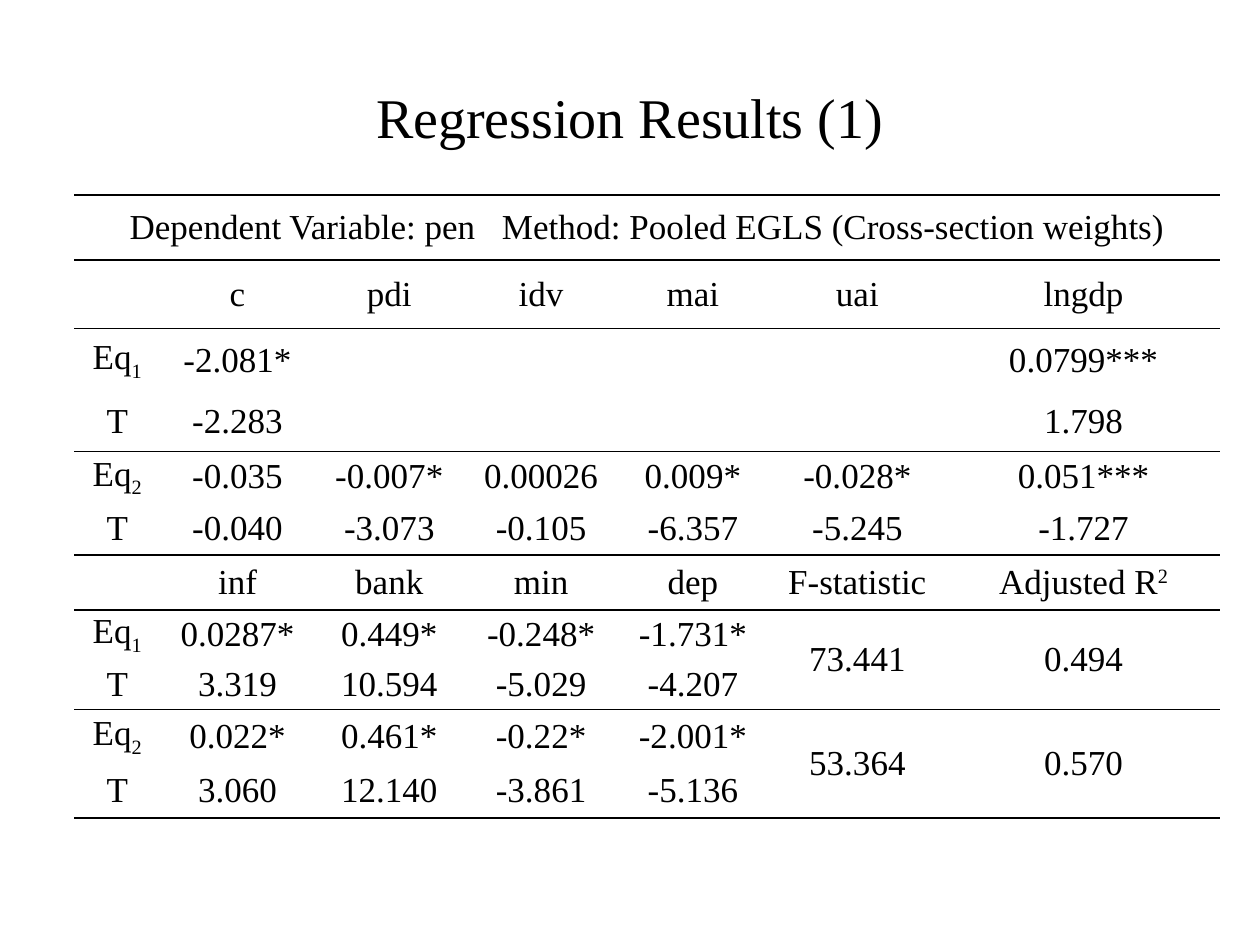
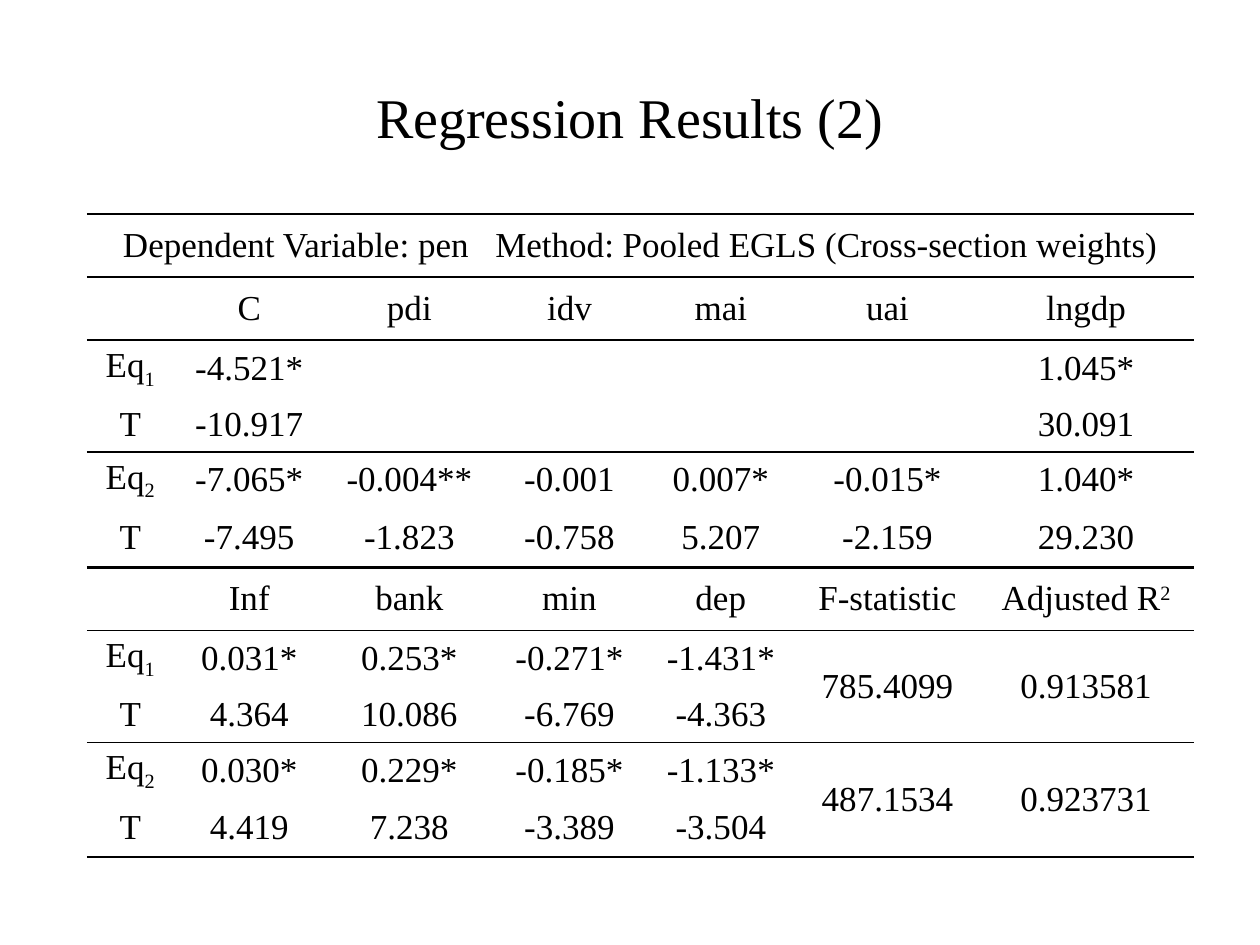
"""Build two slides of pooled regression results, one table each."""
from lxml import etree
from pptx import Presentation
from pptx import util as u
from pptx.dml.color import RGBColor
from pptx.enum import text
from pptx.oxml.ns import qn

BLACK = RGBColor(0, 0, 0)
FONT = "Times New Roman"
PLAIN_TABLE = "{2D5ABB26-0587-4C30-8999-92F81FD0307C}"

SUBSCRIPT = {"baseline": "-25000"}
SUPERSCRIPT = {"baseline": "30000"}
WIDE_GAP = {"spc": "1000"}

METHOD = [("Dependent Variable: pen", {}), (" ", WIDE_GAP),
          ("Method: Pooled EGLS (Cross-section weights)", {})]
EQ1 = [("Eq", {}), ("1", SUBSCRIPT)]
EQ2 = [("Eq", {}), ("2", SUBSCRIPT)]
ADJUSTED_R2 = [("Adjusted R", {}), ("2", SUPERSCRIPT)]

RULES = {0: 1.5, 1: 1.5, 2: 1, 4: 1, 6: 1.5, 7: 1, 9: 1, 11: 1.5}
MERGES = [(0, 0, 0, 6)] + [(row, col, row + 1, col) for row in (7, 9) for col in (5, 6)]

RESULTS = [
    {
        "title": "Regression Results (1)",
        "corner": (42.5, 111.6),
        "widths": [49, 88.5, 85, 88.5, 85, 103, 155.5],
        "heights": [37, 39, 36.5, 34, 29, 30, 31.5, 28.5, 28.5, 30.5, 31.5],
        "rows": [
            [METHOD],
            ["", "c", "pdi", "idv", "mai", "uai", "lngdp"],
            [EQ1, "-2.081*", "", "", "", "", "0.0799***"],
            ["T", "-2.283", "", "", "", "", "1.798"],
            [EQ2, "-0.035", "-0.007*", "0.00026", "0.009*", "-0.028*", "0.051***"],
            ["T", "-0.040", "-3.073", "-0.105", "-6.357", "-5.245", "-1.727"],
            ["", "inf", "bank", "min", "dep", "F-statistic", ADJUSTED_R2],
            [EQ1, "0.0287*", "0.449*", "-0.248*", "-1.731*", "73.441", "0.494"],
            ["T", "3.319", "10.594", "-5.029", "-4.207"],
            [EQ2, "0.022*", "0.461*", "-0.22*", "-2.001*", "53.364", "0.570"],
            ["T", "3.060", "12.140", "-3.861", "-5.136"],
        ],
    },
    {
        "title": "Regression Results (2)",
        "corner": (49.7, 122.4),
        "widths": [49.5, 86.5, 96.5, 86.5, 86.5, 104, 123],
        "heights": [36, 36, 32, 32, 32, 34, 36, 32, 32, 32, 33.5],
        "rows": [
            [METHOD],
            ["", "C", "pdi", "idv", "mai", "uai", "lngdp"],
            [EQ1, "-4.521*", "", "", "", "", "1.045*"],
            ["T", "-10.917", "", "", "", "", "30.091"],
            [EQ2, "-7.065*", "-0.004**", "-0.001", "0.007*", "-0.015*", "1.040*"],
            ["T", "-7.495", "-1.823", "-0.758", "5.207", "-2.159", "29.230"],
            ["", "Inf", "bank", "min", "dep", "F-statistic", ADJUSTED_R2],
            [EQ1, "0.031*", "0.253*", "-0.271*", "-1.431*", "785.4099", "0.913581"],
            ["T", "4.364", "10.086", "-6.769", "-4.363"],
            [EQ2, "0.030*", "0.229*", "-0.185*", "-1.133*", "487.1534", "0.923731"],
            ["T", "4.419", "7.238", "-3.389", "-3.504"],
        ],
    },
]


def write(frame, content, size):
    frame.vertical_anchor = text.MSO_ANCHOR.MIDDLE
    line = frame.paragraphs[0]
    line.alignment = text.PP_ALIGN.CENTER
    pieces = [(content, {})] if isinstance(content, str) else content
    for words, attributes in pieces:
        if not words:
            continue
        run = line.add_run()
        run.text = words
        run.font.name, run.font.size = FONT, u.Pt(size)
        run.font.color.rgb = BLACK
        for key, value in attributes.items():
            run.font._element.set(key, value)


def add_rule(cell, side, weight):
    rule = etree.SubElement(cell._tc.get_or_add_tcPr(), qn(f"a:ln{side}"))
    if not weight:
        etree.SubElement(rule, qn("a:noFill"))
        return
    rule.set("w", str(u.Pt(weight)))
    fill = etree.SubElement(rule, qn("a:solidFill"))
    etree.SubElement(fill, qn("a:srgbClr")).set("val", str(BLACK))


def format_cell(cell, row):
    cell.margin_left = cell.margin_right = u.Pt(5)
    cell.margin_top = cell.margin_bottom = 0
    cell.vertical_anchor = text.MSO_ANCHOR.MIDDLE
    bottom = row + (cell.span_height if cell.is_merge_origin else 1)
    for side, weight in (("L", 0), ("R", 0), ("T", RULES.get(row)), ("B", RULES.get(bottom))):
        add_rule(cell, side, weight)
    cell.fill.background()


def add_results(slide, result):
    widths, heights = result["widths"], result["heights"]
    left, top = result["corner"]
    table = slide.shapes.add_table(
        len(heights), len(widths), u.Pt(left), u.Pt(top),
        u.Pt(sum(widths)), u.Pt(sum(heights))).table
    table.first_row = table.horz_banding = False
    table._tbl.tblPr.find(qn("a:tableStyleId")).text = PLAIN_TABLE
    for column, width in zip(table.columns, widths):
        column.width = u.Pt(width)
    for row, height in zip(table.rows, heights):
        row.height = u.Pt(height)
    for first_row, first_col, last_row, last_col in MERGES:
        table.cell(first_row, first_col).merge(table.cell(last_row, last_col))
    for r, values in enumerate(result["rows"]):
        for c in range(len(widths)):
            format_cell(table.cell(r, c), r)
        for c, value in enumerate(values):
            write(table.cell(r, c).text_frame, value, 20)


def main():
    deck = Presentation()
    deck.slide_width, deck.slide_height = u.Pt(720), u.Pt(540)
    for result in RESULTS:
        slide = deck.slides.add_slide(deck.slide_layouts[5])
        title = slide.shapes.title
        title.left, title.top, title.width, title.height = map(u.Pt, (36, 21.6, 648, 90))
        write(title.text_frame, result["title"], 32)
        add_results(slide, result)
    deck.save("out.pptx")


if __name__ == "__main__":
    main()
